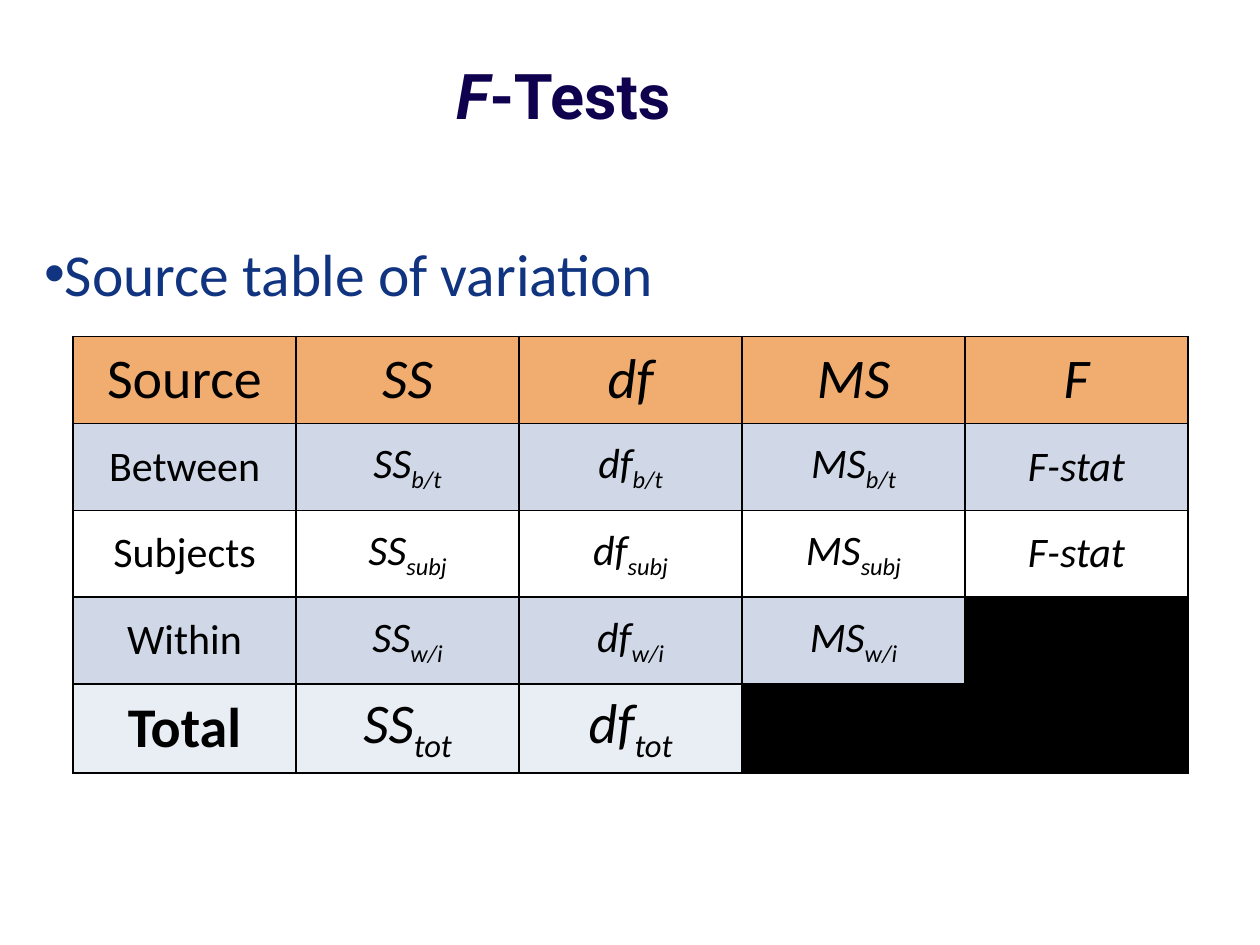
import pptx
import pptx.dml.color
import pptx.enum.text
import pptx.oxml
import pptx.oxml.ns
import pptx.util
from pptx.dml.color import RGBColor
from pptx.util import Inches

NAVY = RGBColor(0x10, 0x01, 0x4F)
BLUE = RGBColor(0x11, 0x34, 0x80)
BLACK = RGBColor(0x00, 0x00, 0x00)
WHITE = RGBColor(0xFF, 0xFF, 0xFF)
ORANGE = RGBColor(0xE8, 0x75, 0x11)
BAND = RGBColor(0xD0, 0xD8, 0xE8)
PALE = RGBColor(0xE9, 0xED, 0xF4)

COLUMNS = 5
COLUMN_WIDTH = 1.77
ROW_HEIGHT = 0.69
ROWS = [
    (["Source", "SS", "df", "MS", "F"], "", 32, ORANGE),
    (["Between", "SS", "df", "MS", "F-stat"], "b/t", 24, BAND),
    (["Subjects", "SS", "df", "MS", "F-stat"], "subj", 24, WHITE),
    (["Within", "SS", "df", "MS"], "w/i", 24, BAND),
    (["Total", "SS", "df"], "tot", 32, PALE),
]


def place(shape, left, top, width, height):
    shape.left, shape.top = Inches(left), Inches(top)
    shape.width, shape.height = Inches(width), Inches(height)


def style(font, name, size, color, bold=False):
    font.name = name
    font.size = pptx.util.Pt(size)
    font.color.rgb = color
    font.bold = bold


def add_span(para, text, italic=None, subscript=False):
    span = para.add_run()
    span.text = text
    span.font.italic = italic
    if subscript:
        span._r.get_or_add_rPr().set("baseline", "-25000")


def fill_title(box):
    place(box, 0.18, 0.25, 8.58, 1)
    frame = box.text_frame
    frame.auto_size = pptx.enum.text.MSO_AUTO_SIZE.NONE
    frame.vertical_anchor = pptx.enum.text.MSO_ANCHOR.MIDDLE
    para = frame.paragraphs[0]
    para.alignment = pptx.enum.text.PP_ALIGN.CENTER
    style(para.font, "Roboto", 36, NAVY, bold=True)
    add_span(para, "F", italic=True)
    add_span(para, "-Tests", italic=False)


def fill_body(box):
    place(box, 0.25, 1.83, 9.75, 5.42)
    box.text_frame.auto_size = pptx.enum.text.MSO_AUTO_SIZE.NONE
    para = box.text_frame.paragraphs[0]
    para.space_before = pptx.util.Pt(0)
    properties = para._p.get_or_add_pPr()
    properties.set("marL", "0")
    properties.set("indent", "0")
    bullet = pptx.oxml.parse_xml(
        f'<a:buChar {pptx.oxml.ns.nsdecls("a")} char="•"/>')
    properties.append(bullet)
    style(para.font, "Calibri", 34, BLUE)
    add_span(para, "Source table of variation")


def add_borders(cell):
    properties = cell._tc.get_or_add_tcPr()
    for side in ("lnL", "lnR", "lnT", "lnB"):
        properties.append(pptx.oxml.parse_xml(
            f'<a:{side} {pptx.oxml.ns.nsdecls("a")} w="12700"><a:solidFill>'
            f'<a:srgbClr val="{BLACK}"/></a:solidFill></a:{side}>'))


def paint(cell, color):
    cell.fill.solid()
    cell.fill.fore_color.rgb = color
    if color == ORANGE:
        tone = cell._tc.tcPr.find(
            f'{pptx.oxml.ns.qn("a:solidFill")}/{pptx.oxml.ns.qn("a:srgbClr")}')
        tone.append(pptx.oxml.parse_xml(
            f'<a:alpha {pptx.oxml.ns.nsdecls("a")} val="60000"/>'))


def write_cell(cell, text, subscript, size, is_label):
    cell.vertical_anchor = pptx.enum.text.MSO_ANCHOR.MIDDLE
    para = cell.text_frame.paragraphs[0]
    para.alignment = pptx.enum.text.PP_ALIGN.CENTER
    style(para.font, "Calibri", size, BLACK, bold=text == "Total")
    para.font.italic = not is_label
    add_span(para, text)
    if subscript and text in ("SS", "df", "MS"):
        add_span(para, subscript, subscript=True)


def add_source_table(page):
    table = page.shapes.add_table(
        len(ROWS), COLUMNS, Inches(0.58), Inches(2.67),
        Inches(COLUMNS * COLUMN_WIDTH), Inches(len(ROWS) * ROW_HEIGHT)).table
    table.first_row = False
    table.horz_banding = False
    for column in table.columns:
        column.width = Inches(COLUMN_WIDTH)
    for row, (texts, subscript, size, color) in zip(table.rows, ROWS):
        row.height = Inches(ROW_HEIGHT)
        for index, cell in enumerate(row.cells):
            add_borders(cell)
            if index < len(texts):
                paint(cell, color)
                write_cell(cell, texts[index], subscript, size, index == 0)
            else:
                paint(cell, BLACK)


def main():
    deck = pptx.Presentation()
    deck.slide_width, deck.slide_height = Inches(10), Inches(7.5)
    page = deck.slides.add_slide(deck.slide_layouts[1])
    fill_title(page.shapes.title)
    fill_body(page.placeholders[1])
    add_source_table(page)
    deck.save("out.pptx")


if __name__ == "__main__":
    main()
